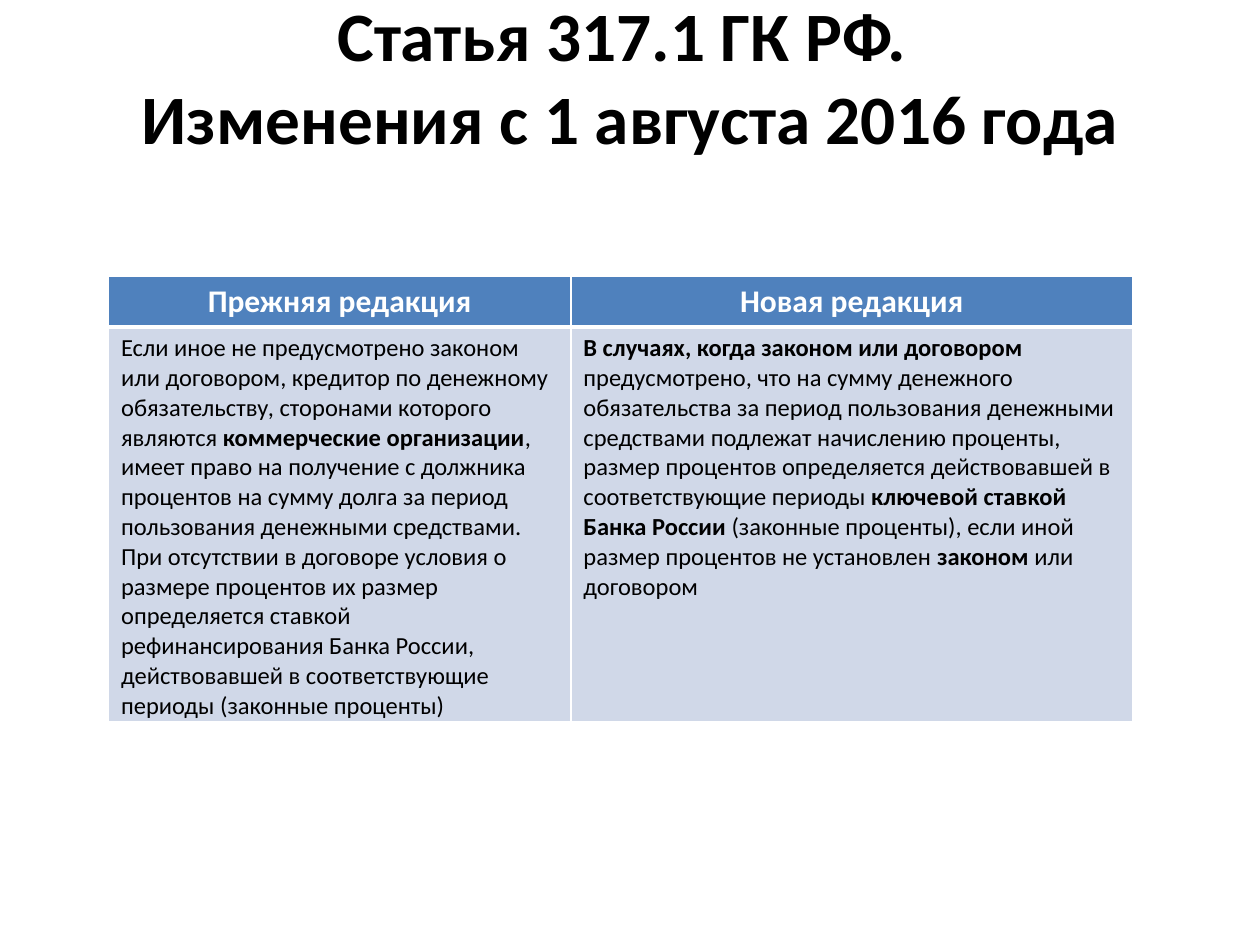
from dataclasses import dataclass

from lxml.etree import SubElement
from pptx import Presentation
from pptx.dml.color import RGBColor
from pptx.enum.text import MSO_ANCHOR as Anchor, PP_ALIGN as Align
from pptx.oxml.ns import qn
from pptx.slide import Slide
from pptx.table import _Cell as Cell
from pptx.text.text import _Paragraph as Paragraph
from pptx.util import Pt

BLACK = RGBColor(0x00, 0x00, 0x00)
WHITE = RGBColor(0xFF, 0xFF, 0xFF)
HEADER_BLUE = RGBColor(0x4F, 0x81, 0xBD)
BODY_BLUE = RGBColor(0xD0, 0xD8, 0xE8)
FONT = "Calibri"


@dataclass(frozen=True)
class Fragment:
    text: str
    bold: bool = False


@dataclass(frozen=True)
class RowStyle:
    height: float
    size: float
    color: RGBColor
    fill: RGBColor
    align: Align
    bottom_border: float


@dataclass(frozen=True)
class Edition:
    heading: str
    width: float
    wording: tuple[Fragment, ...]


HEADING_STYLE = RowStyle(29.2, 18, WHITE, HEADER_BLUE, Align.CENTER, 3)
WORDING_STYLE = RowStyle(225.7, 14, BLACK, BODY_BLUE, Align.LEFT, 1)

TITLE_LINES = ("Статья 317.1 ГК РФ. ", "Изменения с 1 августа 2016 года")

EDITIONS = (
    Edition("Прежняя редакция", 264.2, (
        Fragment("Если иное не предусмотрено законом или договором, кредитор по "
                 "денежному обязательству, сторонами которого являются "),
        Fragment("коммерческие организации", True),
        Fragment(", имеет право на получение с должника процентов на сумму долга "
                 "за период пользования денежными средствами. При отсутствии в "
                 "договоре условия о размере процентов их размер определяется "
                 "ставкой рефинансирования Банка России, действовавшей в "
                 "соответствующие периоды (законные проценты)"),
    )),
    Edition("Новая редакция", 321.1, (
        Fragment("В случаях, когда законом или договором ", True),
        Fragment("предусмотрено, что на сумму денежного обязательства за период "
                 "пользования денежными средствами подлежат начислению проценты, "
                 "размер процентов определяется действовавшей в соответствующие "
                 "периоды "),
        Fragment("ключевой ставкой Банка России ", True),
        Fragment("(законные проценты), если иной размер процентов не установлен "),
        Fragment("законом", True),
        Fragment(" или договором"),
    )),
)


def add_fragment(paragraph: Paragraph, fragment: Fragment, size: float,
                 color: RGBColor) -> None:
    run = paragraph.add_run()
    run.text = fragment.text
    run.font.name = FONT
    run.font.size = Pt(size)
    run.font.bold = fragment.bold
    run.font.color.rgb = color


def add_border(cell: Cell, side: str, width: float) -> None:
    properties = cell._tc.get_or_add_tcPr()
    line = SubElement(properties, qn(f"a:{side}"), w=str(Pt(width)))
    SubElement(SubElement(line, qn("a:solidFill")), qn("a:srgbClr"), val=str(WHITE))


def fill_cell(cell: Cell, fragments: tuple[Fragment, ...], style: RowStyle,
              top_border: float) -> None:
    add_border(cell, "lnL", 1)
    add_border(cell, "lnR", 1)
    add_border(cell, "lnT", top_border)
    add_border(cell, "lnB", style.bottom_border)
    cell.fill.solid()
    cell.fill.fore_color.rgb = style.fill
    paragraph = cell.text_frame.paragraphs[0]
    paragraph.alignment = style.align
    for fragment in fragments:
        add_fragment(paragraph, fragment, style.size, style.color)


def add_title(slide: Slide) -> None:
    frame = slide.shapes.add_textbox(Pt(36), Pt(21.6), Pt(648), Pt(90)).text_frame
    frame.word_wrap = True
    frame.vertical_anchor = Anchor.BOTTOM
    frame.margin_bottom = Pt(21)
    paragraph = frame.paragraphs[0]
    paragraph.alignment = Align.CENTER
    for index, line in enumerate(TITLE_LINES):
        if index:
            paragraph.add_line_break()
        add_fragment(paragraph, Fragment(line, True), 39.6, BLACK)


def add_comparison(slide: Slide) -> None:
    styles = (HEADING_STYLE, WORDING_STYLE)
    width = sum(edition.width for edition in EDITIONS)
    height = sum(style.height for style in styles)
    comparison = slide.shapes.add_table(
        len(styles), len(EDITIONS), Pt(62), Pt(157.7), Pt(width), Pt(height)).table
    for row, style in zip(comparison.rows, styles):
        row.height = Pt(style.height)
    for column, edition in enumerate(EDITIONS):
        comparison.columns[column].width = Pt(edition.width)
        heading = (Fragment(edition.heading, True),)
        fill_cell(comparison.cell(0, column), heading, HEADING_STYLE, 1)
        fill_cell(comparison.cell(1, column), edition.wording, WORDING_STYLE,
                  HEADING_STYLE.bottom_border)


def main() -> None:
    deck = Presentation()
    deck.slide_width, deck.slide_height = Pt(720), Pt(540)
    slide = deck.slides.add_slide(deck.slide_layouts[6])
    add_title(slide)
    add_comparison(slide)
    deck.save("out.pptx")


if __name__ == "__main__":
    main()
